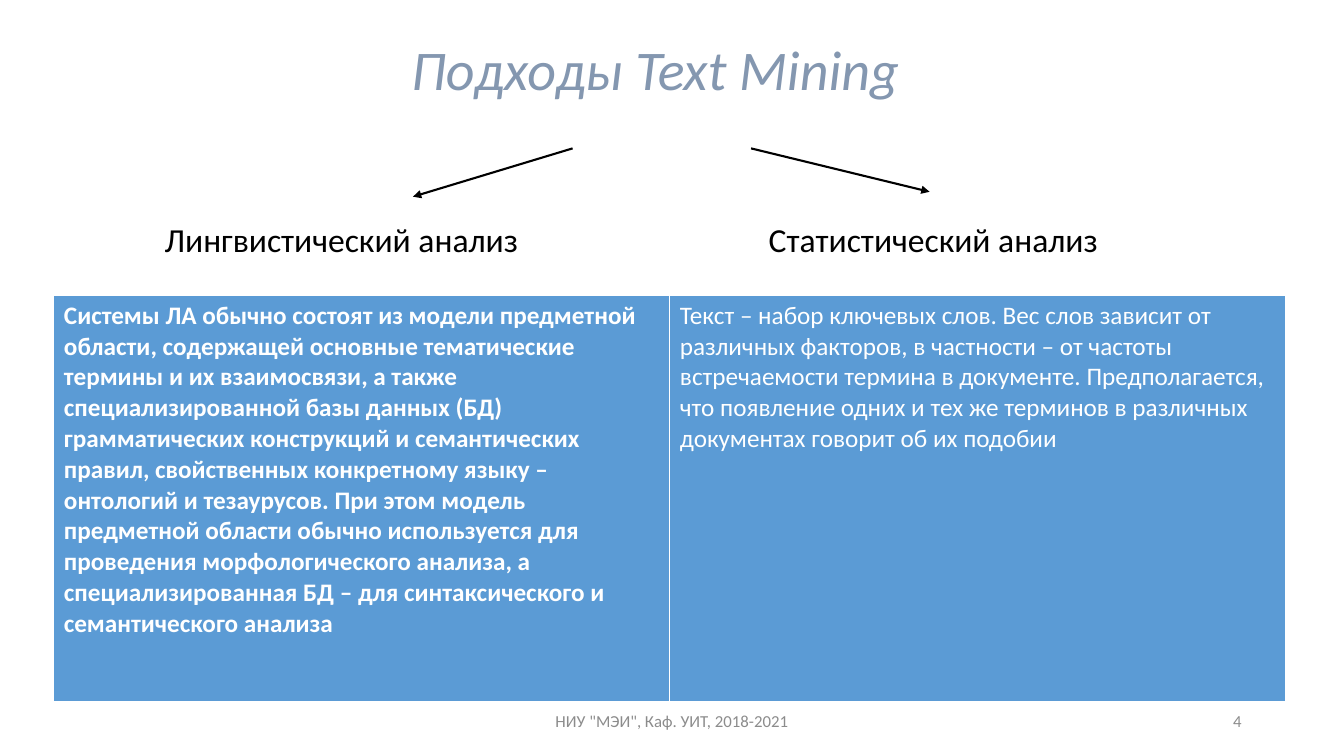
from lxml import etree
from pptx import Presentation
from pptx.dml.color import RGBColor
from pptx.enum.shapes import MSO_CONNECTOR
from pptx.enum.text import MSO_ANCHOR, MSO_AUTO_SIZE, PP_ALIGN
from pptx.oxml.ns import qn
from pptx.util import Pt

LEFT, MID, RIGHT = PP_ALIGN.LEFT, PP_ALIGN.CENTER, PP_ALIGN.RIGHT
BOTTOM, CENTER = MSO_ANCHOR.BOTTOM, MSO_ANCHOR.MIDDLE
NONE = MSO_AUTO_SIZE.NONE
STRAIGHT = MSO_CONNECTOR.STRAIGHT

COLORS = {
    "title": "8497B0",
    "ink": "000000",
    "foot": "8C8C8C",
    "cell": "5B9BD5",
    "white": "FFFFFF",
}


def write(frame, text, size, color, align=LEFT, bold=False, italic=False):
    frame.word_wrap = True
    para = frame.paragraphs[0]
    para.alignment = align
    run = para.add_run()
    run.text = text
    font = run.font
    font.name = "Calibri"
    font.size = Pt(size)
    font.bold = bold
    font.italic = italic
    font.color.rgb = RGBColor.from_string(COLORS[color])
    return para


prs = Presentation()
prs.slide_width, prs.slide_height = Pt(960), Pt(540)
slide = prs.slides.add_slide(prs.slide_layouts[5])
shapes = slide.shapes

title = shapes.title
title.left, title.top, title.width, title.height = Pt(108), Pt(46), Pt(720), Pt(31)
frame = title.text_frame
frame.auto_size = NONE
frame.vertical_anchor = BOTTOM
para = write(frame, "Подходы Text Mining", 40, "title", MID, italic=True)
para.line_spacing = 0.9

LABELS = [
    ("Лингвистический анализ", 110.5, 154, 300, 34, 24, "ink", LEFT),
    ("Статистический анализ", 542, 154, 300, 34, 24, "ink", LEFT),
    ('НИУ "МЭИ", Каф. УИТ, 2018-2021', 318, 500.5, 324, 29, 12, "foot", MID),
    ("4", 678, 500.5, 216, 29, 12, "foot", RIGHT),
]
for text, x, y, wide, high, size, color, align in LABELS:
    box = shapes.add_textbox(Pt(x), Pt(y), Pt(wide), Pt(high))
    box.text_frame.vertical_anchor = CENTER
    write(box.text_frame, text, size, color, align)

for x1, y1, x2, y2 in [(409, 106, 295, 140.5), (536.5, 106, 664, 137)]:
    arrow = shapes.add_connector(STRAIGHT, Pt(x1), Pt(y1), Pt(x2), Pt(y2))
    arrow.line.color.rgb = RGBColor.from_string(COLORS["ink"])
    arrow.line.width = Pt(1.5)
    etree.SubElement(arrow.line._get_or_add_ln(), qn("a:tailEnd"), type="triangle")
    etree.SubElement(arrow._element.spPr, qn("a:effectLst"))

CELLS = [
    ("Системы ЛА обычно состоят из модели предметной области, содержащей "
     "основные тематические термины и их взаимосвязи, а также "
     "специализированной базы данных (БД) грамматических конструкций и "
     "семантических правил, свойственных конкретному языку – онтологий и "
     "тезаурусов. При этом модель предметной области обычно используется для "
     "проведения морфологического анализа, а специализированная БД – для "
     "синтаксического и семантического анализа", True),
    ("Текст – набор ключевых слов. Вес слов зависит от различных факторов, в "
     "частности – от частоты встречаемости термина в документе. Предполагается, "
     "что появление одних и тех же терминов в различных документах говорит об "
     "их подобии", False),
]
EDGES = {"a:lnL": 1, "a:lnR": 1, "a:lnT": 1, "a:lnB": 3}

table = shapes.add_table(1, 2, Pt(38.5), Pt(211), Pt(880), Pt(291)).table
table.first_row = False
table.horz_banding = False
for cell, (text, bold) in zip(table.iter_cells(), CELLS):
    write(cell.text_frame, text, 18, "white", bold=bold)
    props = cell._tc.get_or_add_tcPr()
    for edge, width in EDGES.items():
        line = etree.SubElement(props, qn(edge), w=str(Pt(width)))
        fill = etree.SubElement(line, qn("a:solidFill"))
        etree.SubElement(fill, qn("a:srgbClr"), val=COLORS["white"])
    cell.fill.solid()
    cell.fill.fore_color.rgb = RGBColor.from_string(COLORS["cell"])

prs.save("out.pptx")
